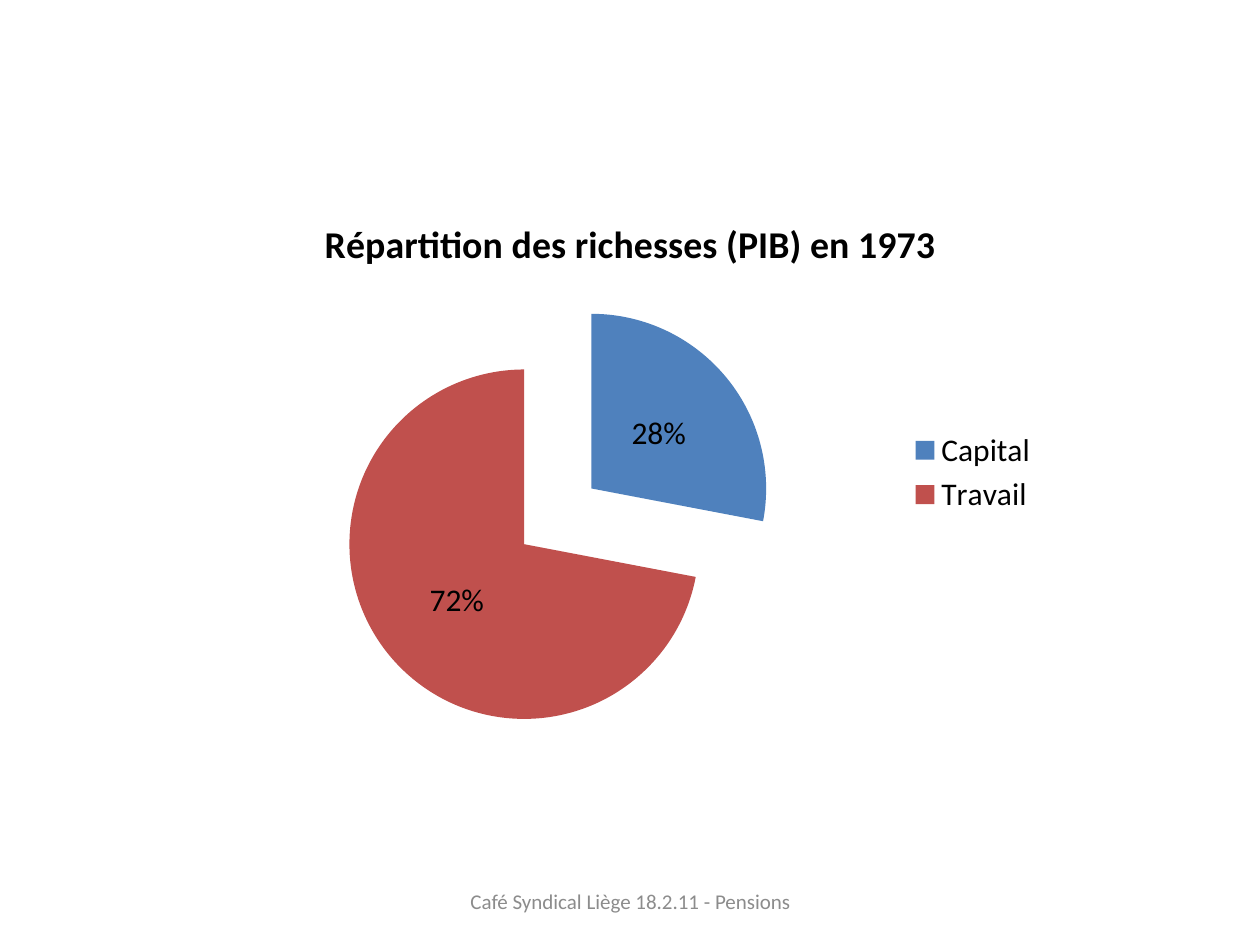
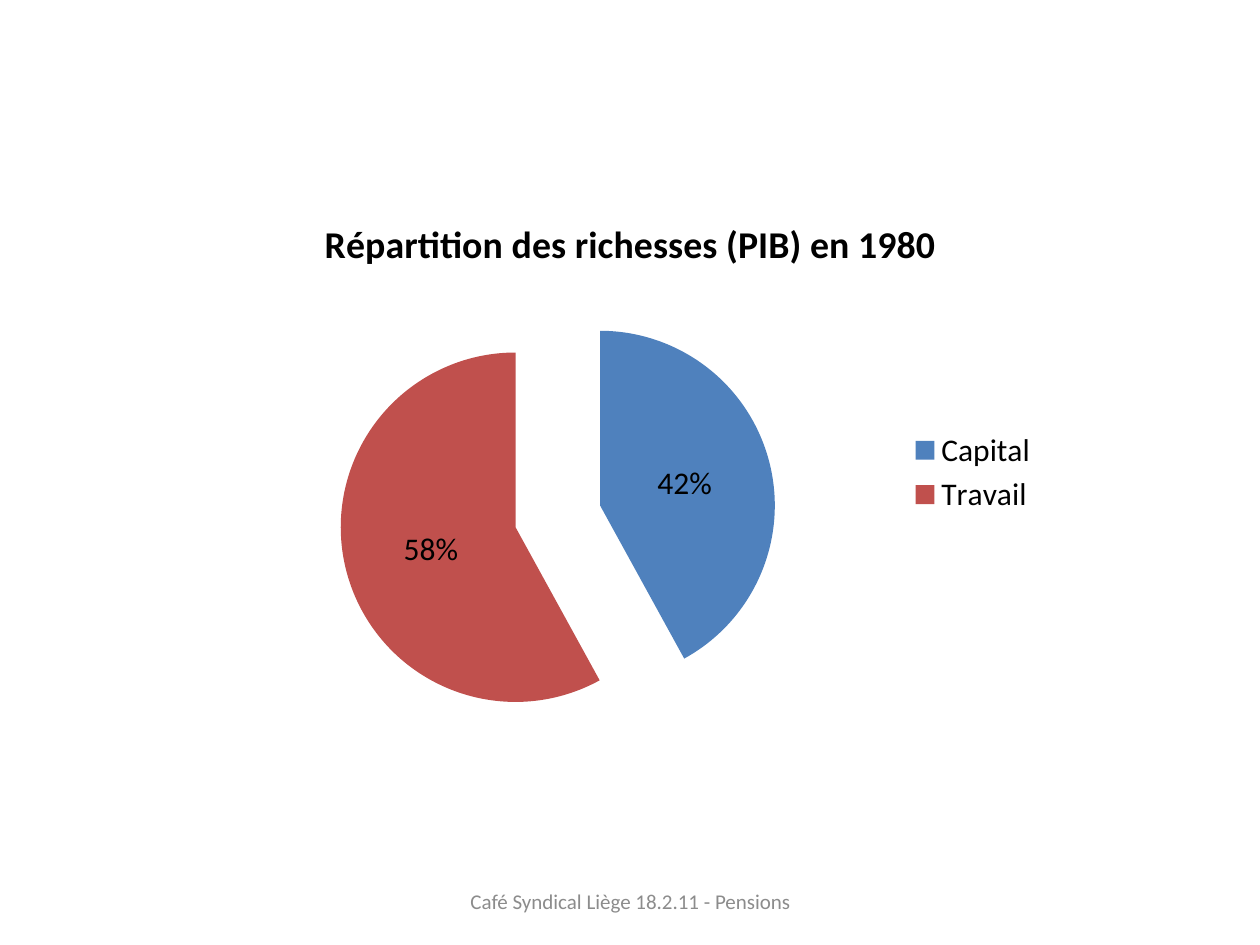
from dataclasses import dataclass

from lxml import etree
from pptx import Presentation
from pptx import util as u
from pptx.chart.data import CategoryChartData
from pptx.dml.color import RGBColor
from pptx.enum import chart as kinds, text
from pptx.oxml.ns import qn


@dataclass(frozen=True)
class Theme:
    font: str = "Calibri"
    ink: str = "000000"
    grey: str = "8C8C8C"
    slices: tuple = ("4F81BD", "C0504D")
    head: float = 21.6
    body: float = 18
    foot: float = 12


FOOTER = "Café Syndical Liège 18.2.11 - Pensions"
PARTS = ("Capital", "Travail")
SHARES = {1973: (28, 72), 1980: (42, 58)}


class Deck:
    def __init__(self, theme):
        self.theme = theme
        self.prs = Presentation()
        self.prs.slide_width, self.prs.slide_height = u.Inches(10), u.Inches(7.5)
        self.slide = None

    def start(self):
        self.slide = self.prs.slides.add_slide(self.prs.slide_layouts[6])

    def style(self, font, size, color, bold=False):
        font.name, font.size, font.bold = self.theme.font, u.Pt(size), bold
        font.color.rgb = RGBColor.from_string(color)

    def pie(self, title, parts, shares, gap=25):
        """Add a pie whose slices stand apart by gap percent of the radius."""
        look = self.theme
        data = CategoryChartData()
        data.categories = parts
        data.add_series("Series 1", shares)
        box = map(u.Inches, (1.67, 1.53, 6.67, 4.44))
        chart = self.slide.shapes.add_chart(kinds.XL_CHART_TYPE.PIE, *box, data).chart
        self.style(chart.font, look.body, look.ink)

        chart.has_title = True
        frame = chart.chart_title.text_frame
        frame.text = title
        self.style(frame.paragraphs[0].runs[0].font, look.head, look.ink, bold=True)
        chart.chart_title.include_in_layout = False

        chart.has_legend = True
        chart.legend.position = kinds.XL_LEGEND_POSITION.RIGHT
        chart.legend.include_in_layout = False

        plot = chart.plots[0]
        plot.vary_by_categories = True
        series = plot.series[0]
        burst = etree.Element(qn("c:explosion"), val=str(gap))
        series._element.find(qn("c:tx")).addnext(burst)
        for index, color in enumerate(look.slices):
            fill = series.points[index].format.fill
            fill.solid()
            fill.fore_color.rgb = RGBColor.from_string(color)

        plot.has_data_labels = True
        labels = plot.data_labels
        labels.show_value, labels.show_percentage = False, True
        labels.number_format, labels.number_format_is_linked = "0%", False
        labels.position = kinds.XL_LABEL_POSITION.CENTER
        self.style(labels.font, look.body, look.ink)

    def footer(self, words):
        box = map(u.Inches, (3.42, 6.95, 3.17, 0.4))
        frame = self.slide.shapes.add_textbox(*box).text_frame
        frame.word_wrap = True
        frame.vertical_anchor = text.MSO_ANCHOR.MIDDLE
        frame.text = words
        line = frame.paragraphs[0]
        line.alignment = text.PP_ALIGN.CENTER
        self.style(line.runs[0].font, self.theme.foot, self.theme.grey)


def main():
    deck = Deck(Theme())
    for year, shares in SHARES.items():
        deck.start()
        deck.pie(f"Répartition des richesses (PIB) en {year}", PARTS, shares)
        deck.footer(FOOTER)
    deck.prs.save("out.pptx")


if __name__ == "__main__":
    main()
